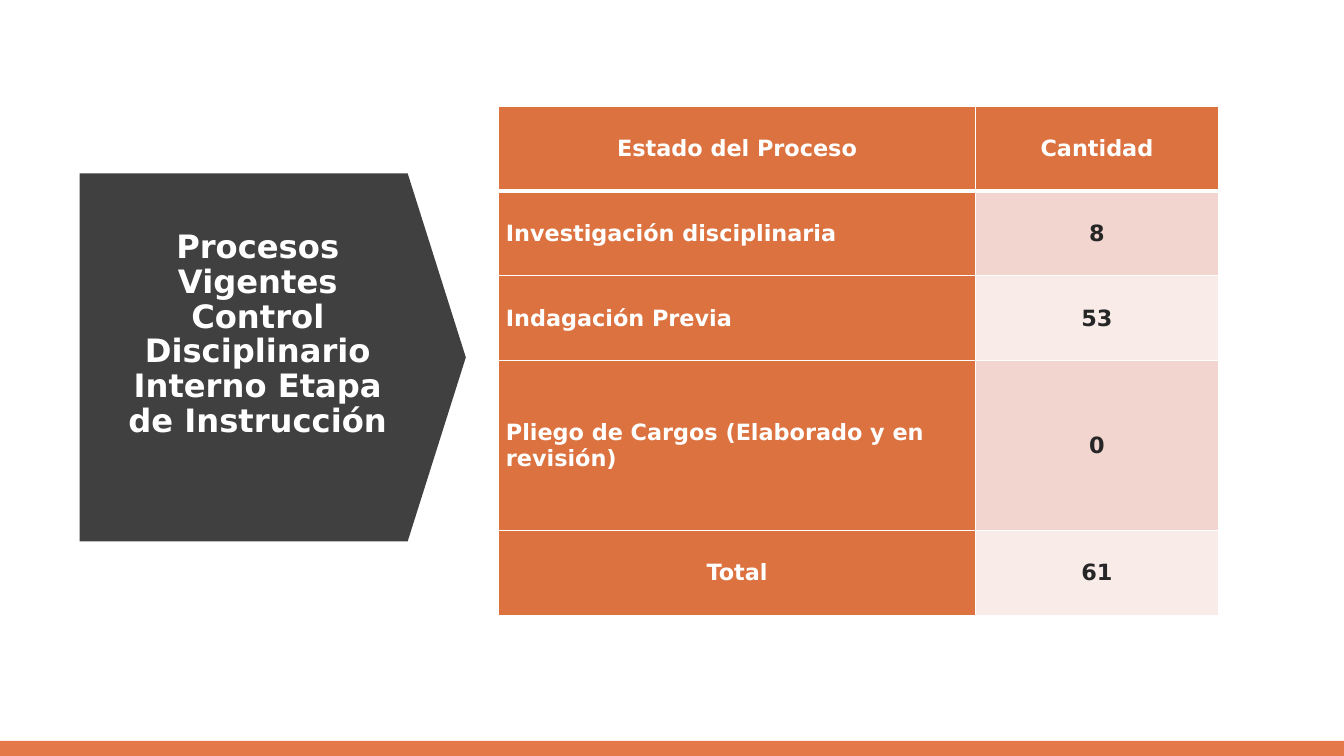
"""Build the slide of current disciplinary processes by state."""
from dataclasses import dataclass

from lxml.etree import SubElement
from pptx import Presentation
from pptx.dml.color import RGBColor
from pptx.enum.shapes import MSO_SHAPE
from pptx.enum.text import MSO_ANCHOR, PP_ALIGN
from pptx.oxml.ns import qn
from pptx.util import Cm, Pt

TITLE = "Procesos Vigentes Control Disciplinario Interno Etapa de Instrucción"
HEADER = ("Estado del Proceso", "Cantidad")
STATES = [
    ("Investigación disciplinaria", 8),
    ("Indagación Previa", 53),
    ("Pliego de Cargos (Elaborado y en revisión)", 0),
]
TOTAL = ("Total", 61)
ROW_UNITS = (1, 1, 1, 2, 1)
COLUMN_WIDTHS = (12.01, 6.13)
ROW_HEIGHT = 2.14


@dataclass(frozen=True)
class Theme:
    """Colours, font and type sizes."""
    bar: str = "E57848"
    arrow: str = "404040"
    label: str = "DC7240"
    bands: tuple = ("F2D5CF", "F9EBE8")
    light: str = "FFFFFF"
    dark: str = "262626"
    font: str = "DejaVu Sans"
    title_size: int = 23
    table_size: int = 16
    thin: int = 1
    thick: int = 3


THEME = Theme()


def add_block(slide, kind, left, top, width, height, color):
    shape = slide.shapes.add_shape(kind, Cm(left), Cm(top), Cm(width), Cm(height))
    shape.shadow.inherit = False
    shape.fill.solid()
    shape.fill.fore_color.rgb = RGBColor.from_string(color)
    shape.line.fill.background()
    return shape


def write(text_frame, text, size, color, alignment):
    paragraph = text_frame.paragraphs[0]
    paragraph.text = text
    paragraph.alignment = alignment
    paragraph.font.name = THEME.font
    paragraph.font.size = Pt(size)
    paragraph.font.bold = True
    paragraph.font.color.rgb = RGBColor.from_string(color)
    return paragraph


def add_border(cell, side, width):
    line = SubElement(cell._tc.get_or_add_tcPr(), qn(f"a:ln{side}"), w=str(Pt(width)))
    fill = SubElement(line, qn("a:solidFill"))
    SubElement(fill, qn("a:srgbClr"), val=THEME.light)


def style_cell(cell, row, column, text):
    is_label = row == 0 or column == 0
    is_state = column == 0 and 0 < row <= len(STATES)
    widths = {"T": THEME.thick if row == 1 else THEME.thin,
              "B": THEME.thick if row == 0 else THEME.thin}
    for side in "LRTB":
        add_border(cell, side, widths.get(side, THEME.thin))
    cell.fill.solid()
    color = THEME.label if is_label else THEME.bands[(row - 1) % 2]
    cell.fill.fore_color.rgb = RGBColor.from_string(color)
    cell.vertical_anchor = MSO_ANCHOR.MIDDLE
    cell.margin_left = cell.margin_right = Cm(0.18)
    cell.margin_top = cell.margin_bottom = 0
    write(cell.text_frame, text, THEME.table_size,
          THEME.light if is_label else THEME.dark,
          PP_ALIGN.LEFT if is_state else PP_ALIGN.CENTER)


def add_title(slide):
    arrow = add_block(slide, MSO_SHAPE.DOWN_ARROW, 2.24, 4.14, 9.27, 9.73, THEME.arrow)
    arrow.rotation = 270
    arrow.adjustments[0] = 1
    arrow.adjustments[1] = 0.158
    text_frame = slide.shapes.add_textbox(Cm(2.84), Cm(5.46), Cm(7.32), Cm(7.09)).text_frame
    text_frame.word_wrap = True
    text_frame.vertical_anchor = MSO_ANCHOR.MIDDLE
    text_frame.margin_bottom = Cm(1.25)
    paragraph = write(text_frame, TITLE, THEME.title_size, THEME.light, PP_ALIGN.CENTER)
    paragraph.line_spacing = 0.9


def add_process_table(slide):
    rows = [HEADER, *STATES, TOTAL]
    table = slide.shapes.add_table(
        len(rows), len(HEADER), Cm(12.57), Cm(2.67),
        Cm(sum(COLUMN_WIDTHS)), Cm(ROW_HEIGHT * sum(ROW_UNITS))).table
    for column, width in zip(table.columns, COLUMN_WIDTHS):
        column.width = Cm(width)
    for row, units in zip(table.rows, ROW_UNITS):
        row.height = Cm(ROW_HEIGHT * units)
    for row, values in enumerate(rows):
        for column, value in enumerate(values):
            style_cell(table.cell(row, column), row, column, str(value))


def main():
    presentation = Presentation()
    presentation.slide_width, presentation.slide_height = Cm(33.87), Cm(19.05)
    slide = presentation.slides.add_slide(presentation.slide_layouts[6])
    add_block(slide, MSO_SHAPE.RECTANGLE, 0, 18.67, 33.87, 0.38, THEME.bar)
    add_title(slide)
    add_process_table(slide)
    presentation.save("out.pptx")


if __name__ == "__main__":
    main()
